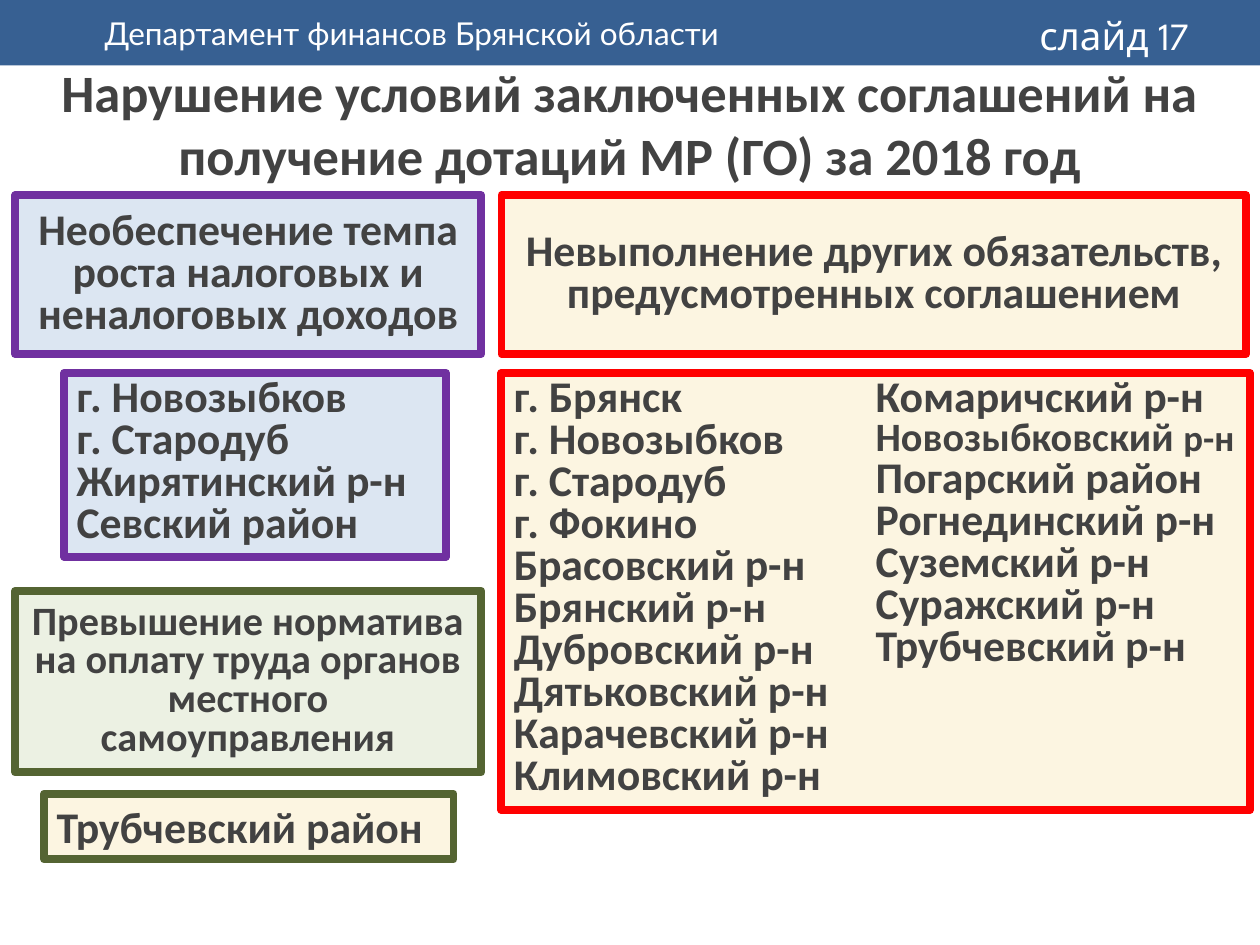
from pptx import Presentation
from pptx.dml.color import RGBColor
from pptx.enum.shapes import MSO_SHAPE as Shape
from pptx.enum.text import MSO_ANCHOR as Anchor, MSO_AUTO_SIZE as Fit, PP_ALIGN as Align
from pptx.util import Inches, Pt

DARK, WHITE = "424242", "FFFFFF"
BLUE, CREAM, SAGE = "DCE6F2", "FCF5E1", "ECF1E3"
PURPLE, RED, GREEN = "7030A0", "FF0000", "546432"


def color(code):
    return RGBColor.from_string(code)


class Deck:
    font = {"name": "Calibri", "bold": True}
    edge = 4.5

    def __init__(self, wide, high):
        self.prs = Presentation()
        self.prs.slide_width, self.prs.slide_height = Inches(wide), Inches(high)
        self.slide = self.prs.slides.add_slide(self.prs.slide_layouts[6])

    def put(self, shape, lines, size, tint=DARK, align=Align.LEFT,
            anchor=Anchor.TOP, gap=None, **font):
        """Fill a shape with lines; a line is a string or a list of (text, size)."""
        frame = shape.text_frame
        frame.word_wrap = True
        frame.vertical_anchor = anchor
        for i, line in enumerate(lines):
            para = frame.paragraphs[0] if i == 0 else frame.add_paragraph()
            para.alignment = align
            para.line_spacing = gap
            for text, pts in [(line, size)] if isinstance(line, str) else line:
                run = para.add_run()
                run.text = text
                run.font.size = Pt(pts)
                run.font.color.rgb = color(tint)
                for key, value in {**self.font, **font}.items():
                    setattr(run.font, key, value)
        return frame

    def text(self, at, line, size, **style):
        box = self.slide.shapes.add_textbox(*map(Inches, at))
        return self.put(box, [line], size, **style)

    def panel(self, at, fill, line, lines, size, **style):
        box = self.slide.shapes.add_shape(Shape.RECTANGLE, *map(Inches, at))
        box.shadow.inherit = False
        box.fill.solid()
        box.fill.fore_color.rgb = color(fill)
        if line:
            box.line.color.rgb = color(line)
            box.line.width = Pt(self.edge)
        else:
            box.line.fill.background()
        return self.put(box, lines, size, **style)

    def head(self, at, fill, line, text, size=25):
        self.panel(at, fill, line, [text], size, align=Align.CENTER,
                   anchor=Anchor.MIDDLE, gap=0.8)

    def roll(self, at, fill, line, names, cols=1, gap=0.8):
        """Add a framed list of places, set in the given number of columns."""
        frame = self.panel(at, fill, line, names, 25, gap=gap)
        frame.auto_size = Fit.SHAPE_TO_FIT_TEXT
        if cols > 1:
            frame._txBody.bodyPr.set("numCol", str(cols))


def main():
    deck = Deck(10, 7.5)
    left, wide, right = 0.12, 3.7, 3.98
    top, high, below = 1.55, 1.26, 2.96

    bar = deck.panel((0, 0, 10, 0.52), "376092", None,
                     ["Департамент финансов Брянской области"], 18, tint=WHITE,
                     anchor=Anchor.MIDDLE, name="Lato", bold=False)
    bar.margin_left = Inches(0.83)
    deck.text((8.15, 0.05, 1.73, 0.47), "слайд 17", 22, tint=WHITE,
              name="League Spartan", bold=False)
    deck.text((left, 0.43, 9.76, 1.1),
              "Нарушение условий заключенных соглашений на получение дотаций МР (ГО) за 2018 год",
              30, align=Align.CENTER, anchor=Anchor.MIDDLE)

    deck.head((left, top, wide, high), BLUE, PURPLE,
              "Необеспечение темпа роста налоговых и неналоговых доходов")
    deck.roll((0.51, below, 3.03, 1.46), BLUE, PURPLE,
              ["г. Новозыбков", "г. Стародуб", "Жирятинский р-н", "Севский район"])

    deck.head((left, 4.69, wide, 1.44), SAGE, GREEN,
              "Превышение норматива на оплату труда органов местного самоуправления", 23)
    deck.roll((0.35, 6.3, 3.25, 0.52), CREAM, GREEN, ["Трубчевский район"], gap=None)

    deck.head((right, top, 5.91, high), CREAM, RED,
              "Невыполнение других обязательств, предусмотренных соглашением")
    deck.roll((right, below, 5.94, 3.47), CREAM, RED, [
        "г. Брянск", "г. Новозыбков", "г. Стародуб", "г. Фокино",
        "Брасовский р-н", "Брянский р-н", "Дубровский р-н", "Дятьковский р-н",
        "Карачевский р-н", "Климовский р-н", "Комаричский р-н",
        [("Новозыбковский ", 23), ("р-н", 21)],
        "Погарский район", "Рогнединский р-н", "Суземский р-н",
        "Суражский р-н", "Трубчевский р-н",
    ], cols=2)

    deck.prs.save("out.pptx")


if __name__ == "__main__":
    main()
